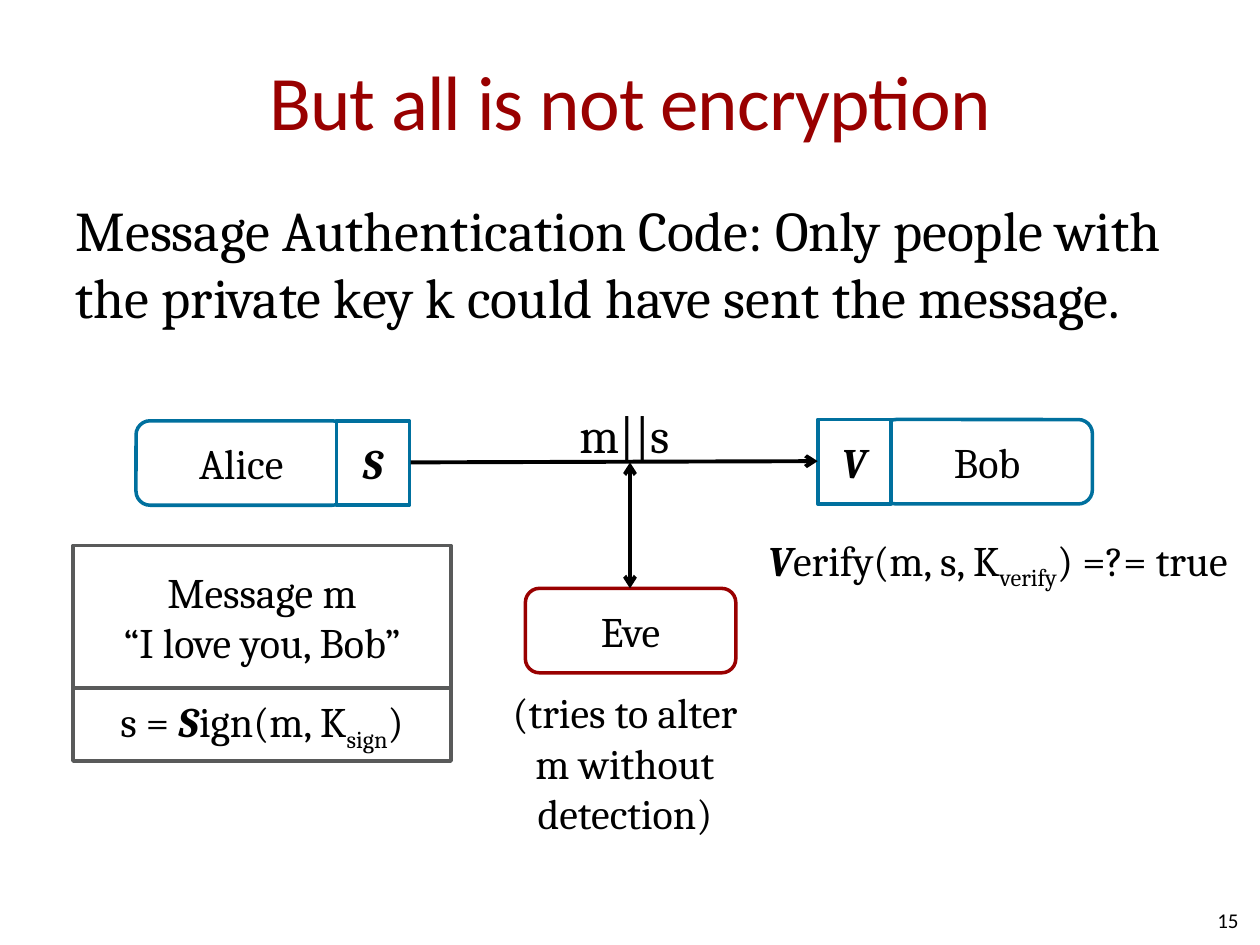
from lxml.etree import SubElement
from pptx import Presentation
from pptx.dml.color import RGBColor
from pptx.enum.shapes import MSO_CONNECTOR, MSO_SHAPE
from pptx.enum.text import MSO_ANCHOR, MSO_AUTO_SIZE, PP_ALIGN
from pptx.oxml.ns import qn
from pptx.util import Inches, Pt

COLORS = {"red": "990000", "blue": "00709E", "gray": "595A5A", "black": "000000", "white": "FFFFFF"}
ROUND, RECT = MSO_SHAPE.ROUNDED_RECTANGLE, MSO_SHAPE.RECTANGLE
LEFT, CENTER, RIGHT = PP_ALIGN.LEFT, PP_ALIGN.CENTER, PP_ALIGN.RIGHT

TITLE = "But all is not encryption"
BODY = "Message Authentication Code: Only people with the private key k could have sent the message."
SIGN = [("s = ", ""), ("S", "bold"), ("ign(m, K", ""), ("sign", "sub"), (")", "")]
VERIFY = [("V", "bold"), ("erify(m, s, K", ""), ("verify", "sub"), (") =?= true", "")]
ALTER = [("(tries to alter\nm without\ndetection)", "")]

BOXES = [
    (RECT, "gray", (0.58, 4.33, 3, 1.13), [("Message m\n“I love you, Bob”", "")]),
    (RECT, "gray", (0.58, 5.46, 3, 0.58), SIGN),
    (ROUND, "blue", (1.08, 3.34, 1.67, 0.67), [("Alice", "")]),
    (ROUND, "blue", (7, 3.33, 1.67, 0.67), [("Bob", "")]),
    (RECT, "blue", (2.67, 3.34, 0.58, 0.67), [("S", "bold")]),
    (RECT, "blue", (6.49, 3.33, 0.58, 0.67), [("V", "bold")]),
    (ROUND, "red", (4.17, 4.67, 1.67, 0.67), [("Eve", "")]),
]
ARROWS = [
    ((3.26, 3.67, 6.49, 3.66), ["tailEnd"]),
    ((5, 4.67, 5, 3.67), ["headEnd", "tailEnd"]),
]
LABELS = [
    ((4.5, 3.16, 1, 1), [("m||s", "")], 28, LEFT, True),
    ((5.92, 4.19, 4, 1), VERIFY, 24, CENTER, True),
    ((4.01, 5.45, 1.9, 1.21), ALTER, 24, CENTER, False),
]


def rgb(name):
    return RGBColor.from_string(COLORS[name])


def place(s, box):
    s.left, s.top, s.width, s.height = [Inches(v) for v in box]


def no_insets(tf):
    tf.margin_left = tf.margin_right = tf.margin_top = tf.margin_bottom = 0


def write(tf, runs, size=24, align=CENTER, font="Cambria", color="black"):
    p = tf.paragraphs[0]
    p.alignment = align
    for text, style in runs:
        for i, line in enumerate(text.split("\n")):
            if i:
                p.add_line_break()
            r = p.add_run()
            r.text = line
            r.font.size, r.font.name = Pt(size), font
            r.font.color.rgb = rgb(color)
            if style == "bold":
                r.font.bold = r.font.italic = True
            elif style == "sub":
                r.font._element.set("baseline", "-25000")
    return p


def add_box(slide, kind, color, box, runs):
    s = slide.shapes.add_shape(kind, *[Inches(v) for v in box])
    s.shadow.inherit = False
    s.fill.solid()
    s.fill.fore_color.rgb = rgb("white")
    s.line.color.rgb = rgb(color)
    s.line.width = Pt(2)
    tf = s.text_frame
    tf.vertical_anchor = MSO_ANCHOR.MIDDLE
    no_insets(tf)
    write(tf, runs)


def add_arrow(slide, ends, heads):
    s = slide.shapes.add_connector(MSO_CONNECTOR.STRAIGHT, *[Inches(v) for v in ends])
    s.line.color.rgb = rgb("black")
    s.line.width = Pt(2.25)
    for head in heads:
        SubElement(s.line._get_or_add_ln(), qn("a:" + head), type="arrow")
    SubElement(s._element.spPr, qn("a:effectLst"))


def add_label(slide, box, runs, size, align, insets):
    tf = slide.shapes.add_textbox(*[Inches(v) for v in box]).text_frame
    tf.word_wrap = False
    if not insets:
        no_insets(tf)
        tf.auto_size = MSO_AUTO_SIZE.SHAPE_TO_FIT_TEXT
    write(tf, runs, size, align)


def main():
    prs = Presentation()
    prs.slide_width, prs.slide_height = Inches(10), Inches(7.5)
    slide = prs.slides.add_slide(prs.slide_layouts[1])

    title, body = slide.placeholders
    place(title, (0.5, 0.17, 9, 1.25))
    tf = title.text_frame
    tf.margin_left = tf.margin_right = 0
    tf.vertical_anchor = MSO_ANCHOR.MIDDLE
    p = write(tf, [(TITLE, "")], 44, CENTER, "Calibri", "red")
    p.runs[0].font._element.set("spc", "-50")

    place(body, (0.5, 1.5, 9, 2.25))
    p = write(body.text_frame, [(BODY, "")], 32, LEFT)
    p.space_before = Pt(6.4)
    pPr = p._p.get_or_add_pPr()
    pPr.set("marL", "0")
    pPr.set("indent", "0")
    SubElement(pPr, qn("a:buNone"))

    for kind, color, box, runs in BOXES:
        add_box(slide, kind, color, box, runs)
    for ends, heads in ARROWS:
        add_arrow(slide, ends, heads)
    for label in LABELS:
        add_label(slide, *label)

    tf = slide.shapes.add_textbox(Inches(7.5), Inches(7.1), Inches(2.33), Inches(0.4)).text_frame
    tf.word_wrap = True
    tf.vertical_anchor = MSO_ANCHOR.MIDDLE
    no_insets(tf)
    write(tf, [("15", "")], 12, RIGHT, "Calibri")

    prs.save("out.pptx")


if __name__ == "__main__":
    main()
